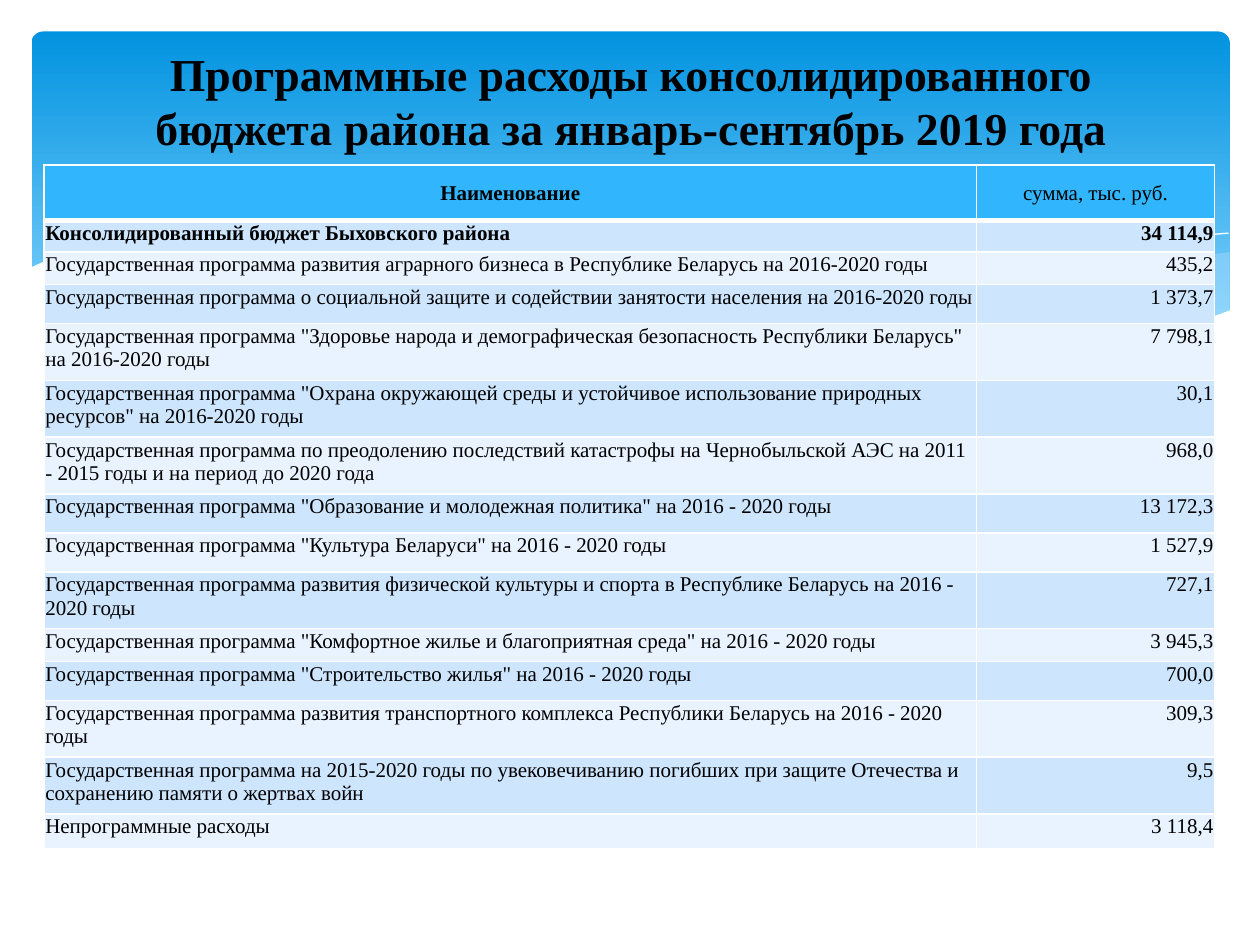
from lxml.etree import SubElement
from pptx import Presentation
from pptx.dml.color import RGBColor
from pptx.enum.shapes import MSO_SHAPE
from pptx.enum.text import MSO_ANCHOR, PP_ALIGN
from pptx.oxml import parse_xml
from pptx.oxml.ns import nsdecls, qn
from pptx.util import Inches, Pt

FONT = "Times New Roman"
BLACK = RGBColor(0x00, 0x00, 0x00)
WHITE = RGBColor(0xFF, 0xFF, 0xFF)
SKY_TOP = RGBColor(0x02, 0x93, 0xE0)
SKY_BOTTOM = RGBColor(0x83, 0xD3, 0xFE)
WAVE_TINT = RGBColor(0xC6, 0xE7, 0xFC)
HEADER_FILL = RGBColor(0x31, 0xB6, 0xFD)
BAND_FILLS = (RGBColor(0xE8, 0xF3, 0xFF), RGBColor(0xCE, 0xE5, 0xFE))

TITLE = "Программные расходы консолидированного бюджета района за январь-сентябрь 2019 года"
HEADER = ("Наименование", "сумма, тыс. руб.", 0.44)
# Name, amount, row height
EXPENSES = [
    ("Консолидированный бюджет Быховского района", "34 114,9", 0.25),
    ("Государственная программа развития аграрного бизнеса в Республике Беларусь "
     "на 2016-2020 годы", "435,2", 0.26),
    ("Государственная программа о социальной защите и содействии занятости населения "
     "на 2016-2020 годы", "1 373,7", 0.31),
    ('Государственная программа "Здоровье народа и демографическая безопасность '
     'Республики Беларусь" на 2016-2020 годы', "7 798,1", 0.45),
    ('Государственная программа "Охрана окружающей среды и устойчивое использование '
     'природных ресурсов" на 2016-2020 годы', "30,1", 0.45),
    ("Государственная программа по преодолению последствий катастрофы на Чернобыльской АЭС "
     "на 2011 - 2015 годы и на период до 2020 года", "968,0", 0.45),
    ('Государственная программа "Образование и молодежная политика" на 2016 - 2020 годы',
     "13 172,3", 0.31),
    ('Государственная программа "Культура Беларуси" на 2016 - 2020 годы', "1 527,9", 0.31),
    ("Государственная программа развития физической культуры и спорта в Республике Беларусь "
     "на 2016 - 2020 годы", "727,1", 0.45),
    ('Государственная программа "Комфортное жилье и благоприятная среда" на 2016 - 2020 годы',
     "3 945,3", 0.26),
    ('Государственная программа "Строительство жилья" на 2016 - 2020 годы', "700,0", 0.31),
    ("Государственная программа развития транспортного комплекса Республики Беларусь "
     "на 2016 - 2020 годы", "309,3", 0.45),
    ("Государственная программа на 2015-2020 годы по увековечиванию погибших при защите "
     "Отечества и сохранению памяти о жертвах войн", "9,5", 0.45),
    ("Непрограммные расходы", "3 118,4", 0.28),
]
COLUMN_WIDTHS = (7.4, 1.89)

# Tinted waves: opacity in percent, outline
TINTED_WAVES = [
    (29, [(9.76, 2), (9.48, 2.04), (9.21, 2.1), (8.91, 2.16), (8.61, 2.23), (8.05, 2.37),
          (7.53, 2.48), (7.06, 2.57), (6.61, 2.65), (6.91, 2.69), (7.32, 2.74), (7.69, 2.77),
          (8.14, 2.78), (8.54, 2.76), (8.89, 2.72), (9.21, 2.65), (9.49, 2.57), (9.76, 2.47)]),
    (40, [(8.93, 2.73), (8.37, 2.65), (7.75, 2.54), (7.06, 2.4), (6.29, 2.22), (5.69, 2.08),
          (5.14, 1.98), (4.65, 1.91), (4.2, 1.87), (3.8, 1.85), (3.44, 1.86), (3.13, 1.88),
          (2.86, 1.91), (3.42, 1.99), (4.04, 2.11), (4.49, 2.22), (5.3, 2.4), (6.01, 2.55),
          (6.65, 2.66), (7.22, 2.74), (7.73, 2.77), (8.18, 2.78), (8.57, 2.77)]),
]
WAVE_LINES = [
    [(3.09, 1.95), (3.28, 1.92), (3.53, 1.89), (3.87, 1.87), (4.33, 1.87), (4.89, 1.9),
     (5.33, 1.94), (5.82, 2), (6.36, 2.08), (6.95, 2.19), (7.6, 2.33), (8.31, 2.51),
     (9.07, 2.72)],
    [(6.13, 2.57), (6.53, 2.46), (6.95, 2.35), (7.48, 2.23), (8.06, 2.1), (8.66, 1.99),
     (8.95, 1.94), (9.24, 1.9), (9.51, 1.87), (9.75, 1.85)],
]
WHITE_WAVE = [
    (9.77, 2.46), (9.5, 2.56), (9.2, 2.65), (8.87, 2.71), (8.5, 2.75), (8.09, 2.77),
    (7.61, 2.75), (7.08, 2.7), (6.48, 2.62), (5.79, 2.5), (5.03, 2.33), (4.47, 2.2),
    (3.91, 2.07), (3.4, 1.97), (2.92, 1.9), (2.5, 1.86), (2.11, 1.84), (1.77, 1.84),
    (1.46, 1.85), (1.19, 1.87), (0.95, 1.91), (0.76, 1.95), (0.59, 1.99), (0.46, 2.03),
    (0.36, 2.07), (0.23, 2.13), (0.23, 3.29), (9.77, 3.29),
]


def add_outline(shapes, points, closed=True):
    start, *rest = [(Inches(x), Inches(y)) for x, y in points]
    builder = shapes.build_freeform(*start)
    builder.add_line_segments(rest, close=closed)
    outline = builder.convert_to_shape()
    outline.shadow.inherit = False
    return outline


def fill_plain(shape, color):
    shape.fill.solid()
    shape.fill.fore_color.rgb = color
    shape.line.fill.background()


def add_backdrop(shapes):
    sky = shapes.add_shape(MSO_SHAPE.ROUNDED_RECTANGLE,
                           Inches(0.25), Inches(0.25), Inches(9.51), Inches(2.7))
    sky.adjustments[0] = 0.034
    sky.shadow.inherit = False
    sky.line.fill.background()
    sky.fill.gradient()
    sky.fill.gradient_angle = 270
    for stop, color, position in zip(sky.fill.gradient_stops, (SKY_TOP, SKY_BOTTOM), (0, 0.9)):
        stop.color.rgb = color
        stop.position = position

    for opacity, points in TINTED_WAVES:
        wave = add_outline(shapes, points)
        fill_plain(wave, WAVE_TINT)
        tint = wave.fill._xPr.find(qn("a:solidFill"))[0]
        SubElement(tint, qn("a:alpha"), val=str(opacity * 1000))
    for points in WAVE_LINES:
        crest = add_outline(shapes, points, closed=False)
        crest.fill.background()
        crest.line.color.rgb = WHITE
        crest.line.width = Pt(0)
    fill_plain(add_outline(shapes, WHITE_WAVE), WHITE)


def set_borders(cell, top, bottom):
    """Draw white borders; top and bottom are widths in points."""
    properties = cell._tc.get_or_add_tcPr()
    for index, (side, width) in enumerate(zip("LRTB", (1, 1, top, bottom))):
        properties.insert(index, parse_xml(
            f'<a:ln{side} {nsdecls("a")} w="{Pt(width)}"><a:solidFill>'
            f'<a:srgbClr val="{WHITE}"/></a:solidFill></a:ln{side}>'))


def add_expense_table(shapes):
    rows = [HEADER, *EXPENSES]
    table = shapes.add_table(len(rows), len(COLUMN_WIDTHS), Inches(0.35), Inches(1.31),
                             Inches(sum(COLUMN_WIDTHS)),
                             Inches(sum(height for *_, height in rows))).table
    for column, width in zip(table.columns, COLUMN_WIDTHS):
        column.width = Inches(width)
    for r, (*texts, height) in enumerate(rows):
        table.rows[r].height = Inches(height)
        for c, text in enumerate(texts):
            cell = table.cell(r, c)
            cell.text = text
            cell.margin_left = cell.margin_right = cell.margin_top = Inches(0.01)
            cell.margin_bottom = 0
            cell.vertical_anchor = MSO_ANCHOR.MIDDLE if r == 0 else MSO_ANCHOR.TOP
            cell.fill.solid()
            cell.fill.fore_color.rgb = HEADER_FILL if r == 0 else BAND_FILLS[r % 2]
            set_borders(cell, top=3 if r == 1 else 1, bottom=3 if r == 0 else 1)
            paragraph = cell.text_frame.paragraphs[0]
            if r == 0:
                paragraph.alignment = PP_ALIGN.CENTER
            else:
                paragraph.alignment = (PP_ALIGN.LEFT, PP_ALIGN.RIGHT)[c]
            set_font(paragraph.font, 12, bold=r == 1 or (r, c) == (0, 0))


def set_font(font, size, bold):
    font.name = FONT
    font.size = Pt(size)
    font.bold = bold
    font.color.rgb = BLACK


def place_title(shapes):
    title = shapes.title
    title.left, title.top, title.width, title.height = map(Inches, (0.51, 0.36, 9, 0.87))
    title.text_frame.text = TITLE
    title.text_frame.vertical_anchor = MSO_ANCHOR.MIDDLE
    paragraph = title.text_frame.paragraphs[0]
    paragraph.alignment = PP_ALIGN.CENTER
    set_font(paragraph.font, 26.1, bold=True)
    shapes._spTree.append(title._element)  # bring in front of the backdrop


def main():
    deck = Presentation()
    deck.slide_width, deck.slide_height = Inches(10), Inches(7.5)
    shapes = deck.slides.add_slide(deck.slide_layouts[5]).shapes
    add_backdrop(shapes)
    add_expense_table(shapes)
    place_title(shapes)
    deck.save("out.pptx")


if __name__ == "__main__":
    main()
